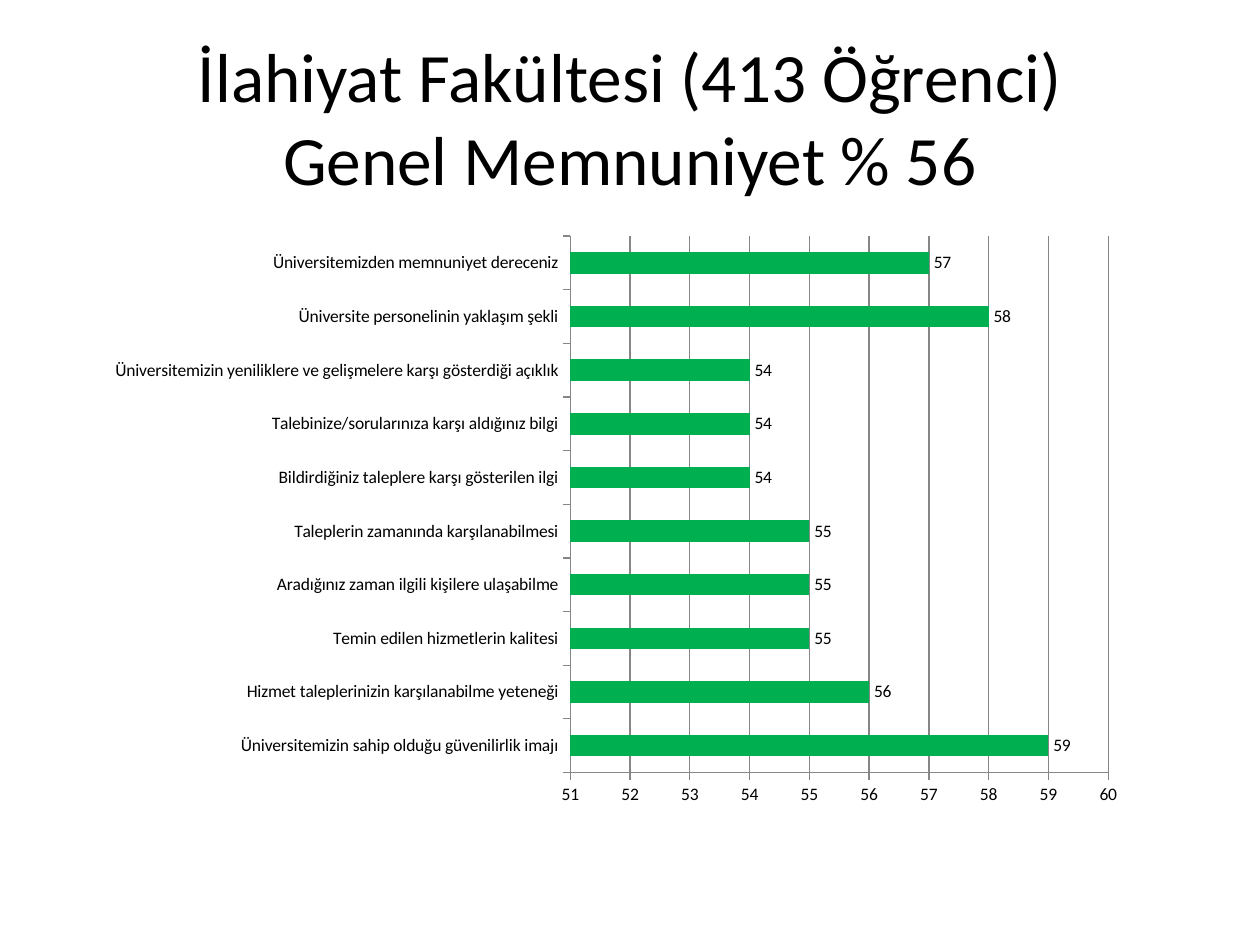
"""Build the satisfaction survey slide with its bar chart of ratings."""
from dataclasses import dataclass
from typing import Any

import pptx
import pptx.chart.data
import pptx.dml.color
import pptx.enum.chart
import pptx.enum.text
import pptx.util

Inches = pptx.util.Inches
Color = pptx.dml.color.RGBColor
ChartKind = pptx.enum.chart.XL_CHART_TYPE
TickMark = pptx.enum.chart.XL_TICK_MARK


@dataclass(frozen=True)
class Theme:
    font: str = "Calibri"
    title_size: float = 39.6
    chart_size: float = 10
    ink: Color = Color(0x00, 0x00, 0x00)
    bar: Color = Color(0x00, 0xB0, 0x50)
    rule: Color = Color(0x86, 0x86, 0x86)
    rule_width: float = 0.75


@dataclass(frozen=True)
class Rating:
    question: str
    percent: int


@dataclass(frozen=True)
class Box:
    left: float
    top: float
    width: float
    height: float

    def lengths(self) -> list[int]:
        return [Inches(v) for v in (self.left, self.top, self.width, self.height)]


THEME = Theme()
TITLE = "İlahiyat Fakültesi (413 Öğrenci)\vGenel Memnuniyet % 56"
TITLE_BOX = Box(0.5, 0.3, 9, 1.25)
CHART_BOX = Box(0.75, 1.78, 8.28, 4.7)
RATINGS = [
    Rating("Üniversitemizin sahip olduğu güvenilirlik imajı", 59),
    Rating("Hizmet taleplerinizin karşılanabilme yeteneği", 56),
    Rating("Temin edilen hizmetlerin kalitesi", 55),
    Rating("Aradığınız zaman ilgili kişilere ulaşabilme", 55),
    Rating("Taleplerin zamanında karşılanabilmesi", 55),
    Rating("Bildirdiğiniz taleplere karşı gösterilen ilgi", 54),
    Rating("Talebinize/sorularınıza karşı aldığınız bilgi", 54),
    Rating("Üniversitemizin yeniliklere ve gelişmelere karşı gösterdiği açıklık", 54),
    Rating("Üniversite personelinin yaklaşım şekli", 58),
    Rating("Üniversitemizden memnuniyet dereceniz", 57),
]


def apply(target: Any, values: dict[str, Any]) -> None:
    """Set each named attribute on the target."""
    for name, value in values.items():
        setattr(target, name, value)


def style_font(font: Any, size: float) -> None:
    """Give a font the theme face and ink at the given size."""
    apply(font, {"name": THEME.font, "size": pptx.util.Pt(size), "bold": False})
    font.color.rgb = THEME.ink


def style_rule(line: Any) -> None:
    """Give an axis or grid line the theme stroke."""
    line.color.rgb = THEME.rule
    line.width = pptx.util.Pt(THEME.rule_width)


def write_title(heading: Any, text: str, box: Box) -> None:
    """Place and format the title placeholder."""
    apply(heading, dict(zip(("left", "top", "width", "height"), box.lengths())))
    frame = heading.text_frame
    apply(frame, {
        "text": text,
        "word_wrap": True,
        "auto_size": pptx.enum.text.MSO_AUTO_SIZE.NONE,
        "vertical_anchor": pptx.enum.text.MSO_ANCHOR.MIDDLE,
    })
    paragraph = frame.paragraphs[0]
    paragraph.alignment = pptx.enum.text.PP_ALIGN.CENTER
    for run in paragraph.runs:
        style_font(run.font, THEME.title_size)


def draw_ratings(slide: Any, ratings: list[Rating], box: Box) -> None:
    """Draw the ratings as horizontal bars with value labels."""
    data = pptx.chart.data.CategoryChartData(number_format="0")
    data.categories = [rating.question for rating in ratings]
    data.add_series("Series 1", [rating.percent for rating in ratings])
    chart = slide.shapes.add_chart(
        ChartKind.BAR_CLUSTERED, *box.lengths(), data
    ).chart
    apply(chart, {"has_legend": False, "has_title": False})
    style_font(chart.font, THEME.chart_size)

    questions, percents = chart.category_axis, chart.value_axis
    ticks = {"major_tick_mark": TickMark.OUTSIDE, "minor_tick_mark": TickMark.NONE}
    apply(questions, ticks)
    apply(percents, ticks | {
        "minimum_scale": 51,
        "maximum_scale": 60,
        "major_unit": 1,
        "has_major_gridlines": True,
    })
    apply(percents.tick_labels, {"number_format": "0", "number_format_is_linked": False})
    for ruled in (questions, percents, percents.major_gridlines):
        style_rule(ruled.format.line)

    plot = chart.plots[0]
    apply(plot, {"gap_width": 150, "vary_by_categories": False, "has_data_labels": True})
    apply(plot.data_labels, {
        "show_value": True,
        "number_format": "0",
        "number_format_is_linked": False,
        "position": pptx.enum.chart.XL_LABEL_POSITION.OUTSIDE_END,
    })
    style_font(plot.data_labels.font, THEME.chart_size)
    bars = plot.series[0]
    bars.invert_if_negative = False
    bars.format.fill.solid()
    bars.format.fill.fore_color.rgb = THEME.bar


def main() -> None:
    """Assemble and save the presentation."""
    deck = pptx.Presentation()
    apply(deck, {"slide_width": Inches(10), "slide_height": Inches(7.5)})
    slide = deck.slides.add_slide(deck.slide_layouts.get_by_name("Title Only"))
    write_title(slide.shapes.title, TITLE, TITLE_BOX)
    draw_ratings(slide, RATINGS, CHART_BOX)
    deck.save("out.pptx")


if __name__ == "__main__":
    main()
